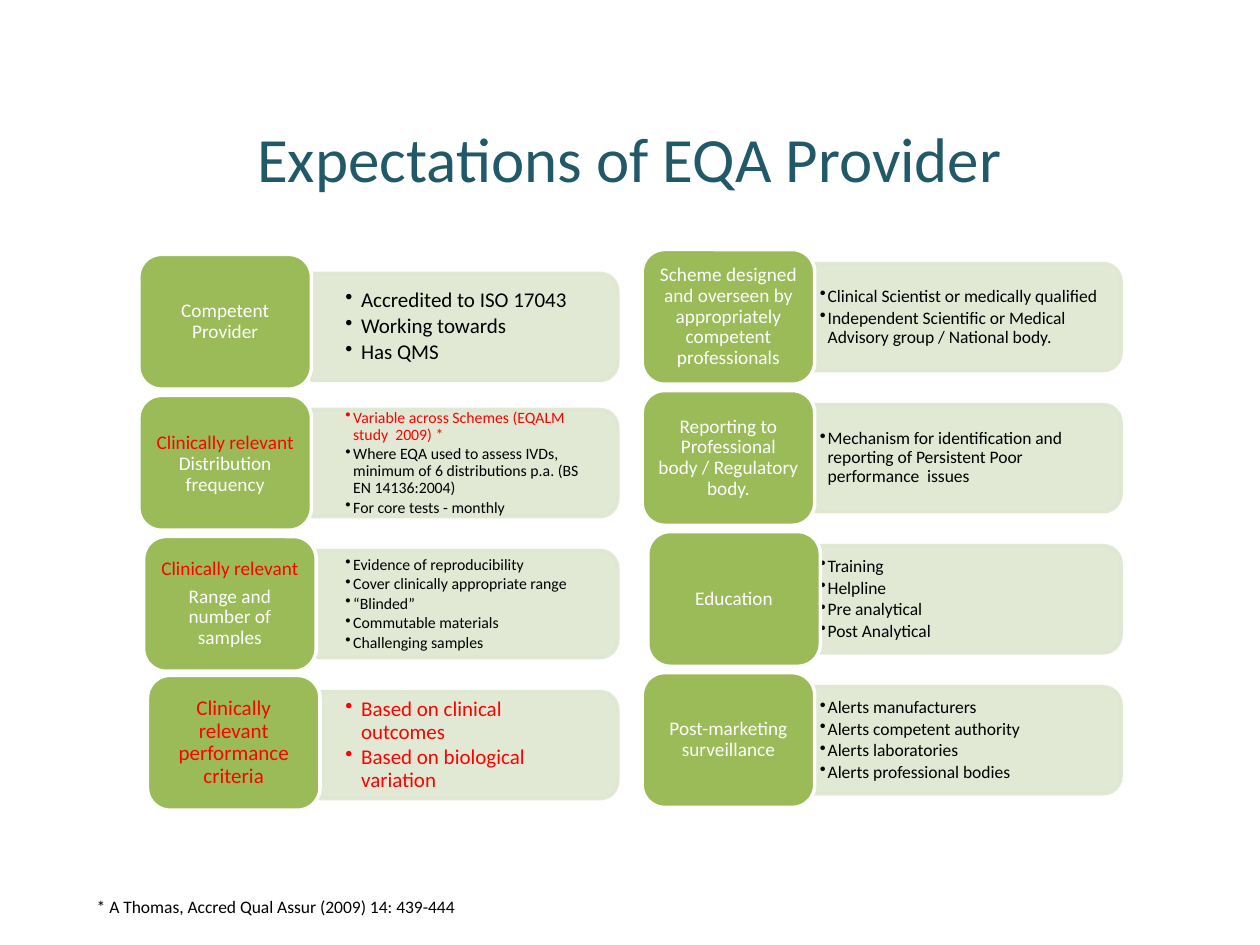
from lxml import etree
from pptx import Presentation
from pptx.dml.color import RGBColor
from pptx.enum import shapes, text
from pptx.oxml import ns
from pptx.util import Pt

COLORS = {"title": "215968", "tile": "9BBB59", "panel": "DEE7D1",
          "white": "FFFFFF", "black": "000000", "red": "FF0000"}
FONT = "Calibri"
TILE_W, TILE_H = 98.6, 77
PANEL_W, PANEL_H = 175, 61.2
PANEL_X, PANEL_Y = 98.6, 8  # panel offset from the tile's regular place
TEXT_W, TEXT_H = 172, 55.2
ROW_PITCH = 80.6

# Each row: tile paragraphs, tile size, panel paragraphs, panel size, and
# optional shifts of the tile (x, y) and of the panel (y).
# A paragraph is (wording, colour).
LEFT_ROWS = [
    dict(tile=[("Competent Provider", "white")], tile_size=11,
         points=[("Accredited to ISO 17043", "black"),
                 ("Working towards", "black"), ("Has QMS", "black")],
         size=12, panel_shift=2.8),
    dict(tile=[("Clinically relevant", "red"),
               ("Distribution frequency", "white")], tile_size=11, tight=True,
         points=[("Variable across Schemes (EQALM study  2009) *", "red"),
                 ("Where EQA used to assess IVDs, minimum of 6 distributions "
                  "p.a. (BS EN 14136:2004)", "black"),
                 ("For core tests - monthly", "black")], size=9),
    dict(tile=[("Clinically relevant", "red"),
               ("Range and number of samples", "white")], tile_size=11,
         points=[("Evidence of reproducibility", "black"),
                 ("Cover clinically appropriate range", "black"),
                 ("“Blinded”", "black"), ("Commutable materials", "black"),
                 ("Challenging samples", "black")],
         size=9, tile_shift=(2.7, 0)),
    dict(tile=[("Clinically relevant performance criteria", "red")],
         tile_size=12,
         points=[("Based on clinical outcomes", "red"),
                 ("Based on biological variation", "red")],
         size=12, tile_shift=(4.9, -1.2)),
]
RIGHT_ROWS = [
    dict(tile=[("Scheme designed and overseen by appropriately competent "
                "professionals", "white")], tile_size=11,
         points=[("Clinical Scientist or medically qualified", "black"),
                 ("Independent Scientific or Medical Advisory group / "
                  "National body.", "black")], size=10),
    dict(tile=[("Reporting to Professional body / Regulatory body.", "white")],
         tile_size=11,
         points=[("Mechanism for identification and reporting of Persistent "
                  "Poor performance  issues", "black")], size=10),
    dict(tile=[("Education", "white")], tile_size=11,
         points=[("Training", "black"), ("Helpline", "black"),
                 ("Pre analytical", "black"), ("Post Analytical", "black")],
         size=10, tile_shift=(3.2, 0)),
    dict(tile=[("Post-marketing surveillance", "white")], tile_size=11,
         points=[("Alerts manufacturers", "black"),
                 ("Alerts competent authority", "black"),
                 ("Alerts laboratories", "black"),
                 ("Alerts professional bodies", "black")], size=10),
]


def rgb(name):
    return RGBColor.from_string(COLORS[name])


def add_run(para, wording, size, color):
    span = para.add_run()
    span.text = wording
    span.font.name = FONT
    span.font.size = Pt(size)
    span.font.color.rgb = rgb(color)


def set_frame(box, inset_x, inset_y, anchor=text.MSO_ANCHOR.MIDDLE):
    frame = box.text_frame
    frame.word_wrap = True
    frame.vertical_anchor = anchor
    frame.margin_left = frame.margin_right = Pt(inset_x)
    frame.margin_top = frame.margin_bottom = Pt(inset_y)
    return frame


def fill_frame(frame, items, size, gap, align):
    """Write one paragraph per item, spaced by a share of the text size."""
    for index, (wording, color) in enumerate(items):
        para = frame.add_paragraph() if index else frame.paragraphs[0]
        para.alignment = align
        para.line_spacing = 0.9
        para.space_after = Pt(round(gap * size, 2))
        add_run(para, wording, size, color)


def set_bullet(para, indent):
    props = para._p.get_or_add_pPr()
    props.set("marL", str(Pt(indent)))
    props.set("indent", str(-Pt(indent)))
    etree.SubElement(props, ns.qn("a:buChar")).set("char", "•")


def add_block(group, kind, box, fill, line):
    block = group.shapes.add_shape(kind, *map(Pt, box))
    block.shadow.inherit = False
    block.fill.solid()
    block.fill.fore_color.rgb = rgb(fill)
    block.line.color.rgb = rgb(line)
    block.line.width = Pt(2)
    return block


def add_panel(group, left, top, row, inset):
    """Pale panel, turned so its round corners face right, with bullets."""
    box = (left + (PANEL_W - PANEL_H) / 2, top - (PANEL_W - PANEL_H) / 2,
           PANEL_H, PANEL_W)
    panel = add_block(group, shapes.MSO_SHAPE.ROUND_2_SAME_RECTANGLE, box,
                      "panel", "panel")
    panel.rotation = 90
    for color in panel._element.spPr.iter(ns.qn("a:srgbClr")):
        etree.SubElement(color, ns.qn("a:alpha")).set("val", "90000")

    label = group.shapes.add_textbox(
        Pt(left), Pt(top + (PANEL_H - TEXT_H) / 2), Pt(TEXT_W), Pt(TEXT_H))
    frame = set_frame(label, *inset)
    fill_frame(frame, row["points"], row["size"], 0.15, text.PP_ALIGN.LEFT)
    for para in frame.paragraphs:
        set_bullet(para, 9 if row["size"] == 12 else 4.5)


def add_tile(group, left, top, row):
    tile = add_block(group, shapes.MSO_SHAPE.ROUNDED_RECTANGLE,
                     (left, top, TILE_W, TILE_H), "tile", "white")
    frame = set_frame(tile, 3.8, 1.9)
    fill_frame(frame, row["tile"], row["tile_size"], 0.35,
               text.PP_ALIGN.CENTER)
    if row.get("tight"):
        frame.paragraphs[0].line_spacing = 1.0
        frame.paragraphs[0].space_after = Pt(0)


def add_column(page, left, top, rows, inset):
    group = page.shapes.add_group_shape()
    for index, row in enumerate(rows):
        row_top = top + index * ROW_PITCH
        shift_x, shift_y = row.get("tile_shift", (0, 0))
        add_panel(group, left + PANEL_X,
                  row_top + PANEL_Y + row.get("panel_shift", 0), row, inset)
        add_tile(group, left + shift_x, row_top + shift_y, row)


def add_line(page, box, wording, size, color, align, anchor):
    label = page.shapes.add_textbox(*map(Pt, box))
    para = set_frame(label, 7.2, 3.6, anchor).paragraphs[0]
    para.alignment = align
    add_run(para, wording, size, color)


def main():
    deck = Presentation()
    deck.slide_width, deck.slide_height = Pt(720), Pt(540)
    page = deck.slides.add_slide(deck.slide_layouts[6])

    # Title
    add_line(page, (79.2, 53.3, 561, 72.7), "Expectations of EQA Provider", 36,
             "title", text.PP_ALIGN.CENTER, text.MSO_ANCHOR.MIDDLE)
    # Two columns of expectations
    add_column(page, 79.4, 145.4, LEFT_ROWS, (19.4, 10))
    add_column(page, 367, 142.6, RIGHT_ROWS, (2.9, 1.4))
    # Footnote
    add_line(page, (48.2, 508.3, 238.3, 19.4),
             "* A Thomas, Accred Qual Assur (2009) 14: 439-444", 10,
             "black", text.PP_ALIGN.LEFT, text.MSO_ANCHOR.TOP)
    deck.save("out.pptx")


if __name__ == "__main__":
    main()
